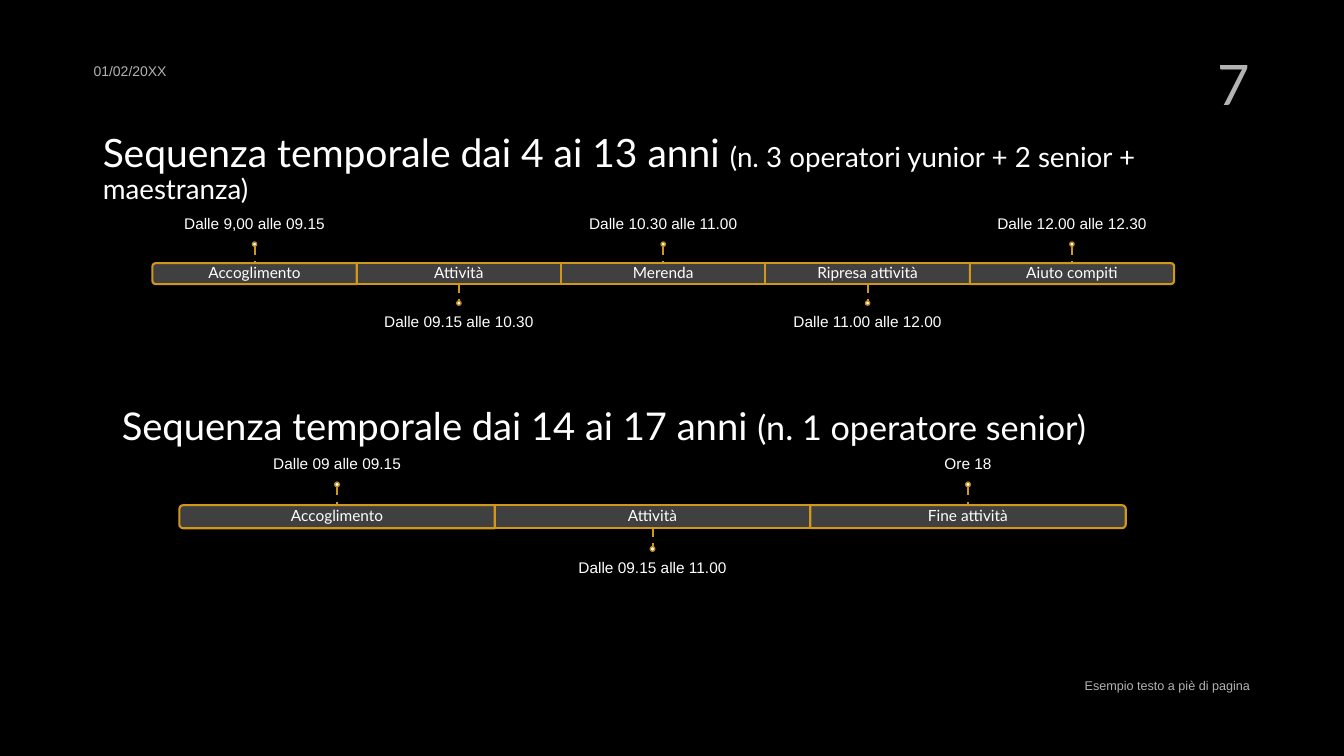
from lxml import etree
from pptx import Presentation
from pptx.dml.color import RGBColor
from pptx.enum.dml import MSO_LINE
from pptx.enum.shapes import MSO_CONNECTOR, MSO_SHAPE
from pptx.enum.text import MSO_ANCHOR, MSO_AUTO_SIZE, PP_ALIGN
from pptx.oxml.ns import qn
from pptx.util import Cm, Pt

LEFT, CENTER, RIGHT = PP_ALIGN.LEFT, PP_ALIGN.CENTER, PP_ALIGN.RIGHT
TOP, MIDDLE, BOTTOM = MSO_ANCHOR.TOP, MSO_ANCHOR.MIDDLE, MSO_ANCHOR.BOTTOM
ROUNDED, RECTANGLE, OVAL = MSO_SHAPE.ROUND_2_SAME_RECTANGLE, MSO_SHAPE.RECTANGLE, MSO_SHAPE.OVAL

WHITE, BLACK, GRAY, GOLD, DARK_GOLD = "FFFFFF", "000000", "404040", "D1971A", "BE8918"
HEADING_FONT, BODY_FONT = "Lato", "Arial"
DEFAULT_INSETS = (0.25, 0.13, 0.25, 0.13)
BAR_INSETS = (0.23, 0.23, 0.23, 0.23)

TITLE_BOX = (2.34, 3.23, 29.64, 2.11)
TITLE_RUNS = [
    ("Sequenza temporale dai 4 ai 13 anni ", 27.9),
    ("(n. 3 operatori yunior + 2 senior + maestranza)", 19.8),
]
SUBTITLE_BOX = (2.82, 10.13, 29.64, 2.11)
SUBTITLE_RUNS = [
    ("Sequenza temporale dai 14 ai 17 anni ", 27.3),
    ("(n. 1 operatore senior)", 24.4),
]
MARGINALS = [
    ((2.11, 1.12, 8.46, 1.02), "01/02/20XX", 10, BODY_FONT, LEFT, BOTTOM),
    ((19.05, 16.94, 12.7, 1.02), "Esempio testo a piè di pagina", 9, BODY_FONT, RIGHT, TOP),
    ((25.4, 1.12, 6.35, 2.11), "7", 40, HEADING_FONT, RIGHT, TOP),
]
TIMELINES = [
    {
        "left": 3.84, "top": 6.63, "step": 5.15, "height": 0.53,
        "stages": [
            ("Accoglimento", "Dalle 9,00 alle 09.15"),
            ("Attività", "Dalle 09.15 alle 10.30"),
            ("Merenda", "Dalle 10.30 alle 11.00"),
            ("Ripresa attività", "Dalle 11.00 alle 12.00"),
            ("Aiuto compiti", "Dalle 12.00 alle 12.30"),
        ],
    },
    {
        "left": 4.52, "top": 12.73, "step": 7.95, "height": 0.58,
        "stages": [
            ("Accoglimento", "Dalle 09 alle 09.15"),
            ("Attività", "Dalle 09.15 alle 11.00"),
            ("Fine attività", "Ore 18"),
        ],
    },
]


def color(value):
    return RGBColor.from_string(value)


def lengths(box):
    return [Cm(value) for value in box]


def write(shape, runs, font, align=LEFT, anchor=TOP, insets=DEFAULT_INSETS, spacing=0.9, alpha=None):
    frame = shape.text_frame
    frame.word_wrap = True
    frame.auto_size = MSO_AUTO_SIZE.NONE
    frame.vertical_anchor = anchor
    frame.margin_left, frame.margin_top, frame.margin_right, frame.margin_bottom = lengths(insets)
    paragraph = frame.paragraphs[0]
    paragraph.alignment = align
    paragraph.line_spacing = spacing
    for text, size in runs:
        run = paragraph.add_run()
        run.text = text
        run.font.name = font
        run.font.size = Pt(size)
        run.font.color.rgb = color(WHITE)
        if alpha:
            fill = run.font._element.find(qn("a:solidFill"))
            etree.SubElement(fill[0], qn("a:alpha")).set("val", str(alpha * 1000))


def add_text(shapes, box, runs, font, **options):
    write(shapes.add_textbox(*lengths(box)), runs, font, **options)


def add_outlined(shapes, kind, box, fill, line, width):
    shape = shapes.add_shape(kind, *lengths(box))
    shape.shadow.inherit = False
    shape.fill.solid()
    shape.fill.fore_color.rgb = color(fill)
    shape.line.color.rgb = color(line)
    shape.line.width = Pt(width)
    return shape


def add_bar(shapes, box, rotation):
    left, top, width, height = box
    if not rotation:
        add_outlined(shapes, RECTANGLE, box, GRAY, GOLD, 1.5)
        return
    upright = (left + (width - height) / 2, top + (height - width) / 2, height, width)
    add_outlined(shapes, ROUNDED, upright, GRAY, GOLD, 1.5).rotation = rotation


def add_stem(shapes, x, start, end):
    stem = shapes.add_connector(MSO_CONNECTOR.STRAIGHT, Cm(x), Cm(start), Cm(x), Cm(end))
    stem.line.color.rgb = color(GOLD)
    stem.line.width = Pt(1.5)
    stem.line.dash_style = MSO_LINE.DASH
    etree.SubElement(stem._element.spPr, qn("a:effectLst"))


def add_timeline(slide, timeline):
    shapes = slide.shapes.add_group_shape().shapes
    top, step, height = timeline["top"], timeline["step"], timeline["height"]
    bottom = top + height
    label_width, label_height = 1.665 * step, 3.43 * height
    stem_length, dot = 0.8 * height, 0.2 * height
    last = len(timeline["stages"]) - 1
    for index, (name, time) in enumerate(timeline["stages"]):
        left = timeline["left"] + index * step
        middle = left + step / 2
        bar = (left, top, step, height)
        add_bar(shapes, bar, {0: 270, last: 90}.get(index, 0))
        add_text(shapes, bar, [(name, 11)], HEADING_FONT, align=CENTER, anchor=MIDDLE, insets=BAR_INSETS)
        if index % 2 == 0:
            label_top, anchor, insets = top - height - label_height, BOTTOM, (0, 0, 0, 0.23)
            start, end, dot_top = top - stem_length, top, top - height
        else:
            label_top, anchor, insets = bottom + height, TOP, (0, 0.23, 0, 0)
            start, end, dot_top = bottom, bottom + stem_length, bottom + stem_length
        label = (middle - label_width / 2, label_top, label_width, label_height)
        add_text(shapes, label, [(time, 11)], BODY_FONT, align=CENTER, anchor=anchor, insets=insets)
        add_stem(shapes, middle, start, end)
        add_outlined(shapes, OVAL, (middle - dot / 2, dot_top, dot, dot), WHITE, DARK_GOLD, 1)


def main():
    presentation = Presentation()
    presentation.slide_width, presentation.slide_height = Cm(33.87), Cm(19.05)
    slide = presentation.slides.add_slide(presentation.slide_layouts[5])
    slide.background.fill.solid()
    slide.background.fill.fore_color.rgb = color(BLACK)

    title = slide.shapes.title
    title.left, title.top, title.width, title.height = lengths(TITLE_BOX)
    write(title, TITLE_RUNS, HEADING_FONT)

    for timeline in TIMELINES:
        add_timeline(slide, timeline)
    for box, text, size, font, align, anchor in MARGINALS:
        add_text(slide.shapes, box, [(text, size)], font, align=align, anchor=anchor, spacing=1.0, alpha=70)
    add_text(slide.shapes, SUBTITLE_BOX, SUBTITLE_RUNS, HEADING_FONT)

    presentation.save("out.pptx")


if __name__ == "__main__":
    main()
